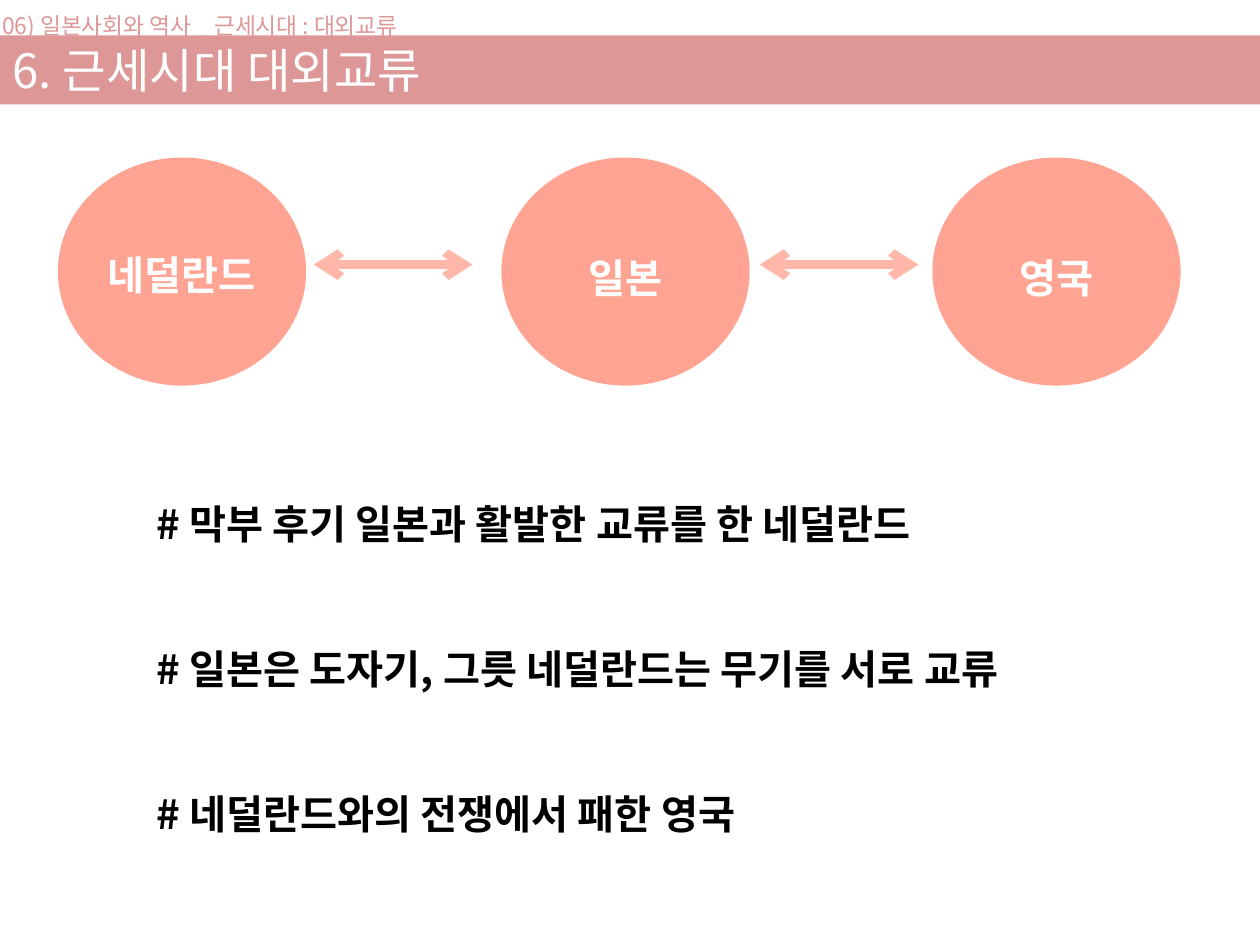
"""Build the slide on foreign exchange in early modern Japan."""
from typing import NamedTuple

from lxml import etree
from pptx import Presentation
from pptx.dml.color import RGBColor
from pptx.enum.shapes import MSO_CONNECTOR, MSO_SHAPE
from pptx.enum.text import MSO_ANCHOR, PP_ALIGN
from pptx.oxml.ns import qn
from pptx.util import Inches, Pt

OVAL, STRAIGHT = MSO_SHAPE.OVAL, MSO_CONNECTOR.STRAIGHT
LEFT, CENTER = PP_ALIGN.LEFT, PP_ALIGN.CENTER
TOP, MIDDLE = MSO_ANCHOR.TOP, MSO_ANCHOR.MIDDLE
WIDTH, HEIGHT = Inches(10), Inches(7.5)
FONT = "Noto Sans CJK KR"
ROSE, CORAL, PEACH, WHITE, BLACK = "DD9797", "FFA492", "FEB7A8", "FFFFFF", "000000"


class Box(NamedTuple):
    """A frame in percent of the slide's width and height."""
    x: float
    y: float
    w: float
    h: float


class Style(NamedTuple):
    """The look of a block of text."""
    size: float
    color: str
    bold: bool = False
    align: PP_ALIGN = LEFT
    anchor: MSO_ANCHOR = MIDDLE


class Country(NamedTuple):
    """A circle with its name and the top of the name's box."""
    name: str
    x: float
    label_y: float


HEADER = Style(13, ROSE)
TITLE = Style(27, WHITE)
LABEL = Style(23, WHITE, True, CENTER)
LIST = Style(23, BLACK, True, LEFT, TOP)
COUNTRIES = [Country("네덜란드", 4.6, 25.87), Country("일본", 39.8, 26.13),
             Country("영국", 74, 26.13)]
ARROW_STARTS = [24.9, 60.3]
POINTS = ["# 막부 후기 일본과 활발한 교류를 한 네덜란드",
          "# 일본은 도자기, 그릇 네덜란드는 무기를 서로 교류",
          "# 네덜란드와의 전쟁에서 패한 영국"]


def rgb(color: str) -> RGBColor:
    """Turn a hex string into a colour."""
    return RGBColor.from_string(color)


def px(share: float) -> int:
    """Turn a percentage of the width into a length."""
    return int(WIDTH * share / 100)


def py(share: float) -> int:
    """Turn a percentage of the height into a length."""
    return int(HEIGHT * share / 100)


def frame(box: Box) -> tuple:
    """Return left, top, width and height of a box."""
    return px(box.x), py(box.y), px(box.w), py(box.h)


def place(s, box: Box) -> None:
    """Move a placeholder to a box."""
    s.left, s.top, s.width, s.height = frame(box)


def write(s, lines: list, style: Style) -> None:
    """Fill a shape with styled paragraphs."""
    tf = s.text_frame
    tf.word_wrap, tf.vertical_anchor = True, style.anchor
    for i, line in enumerate(lines):
        p = tf.paragraphs[0] if i == 0 else tf.add_paragraph()
        p.alignment = style.align
        r = p.add_run()
        r.text = line
        for name, value in {"size": Pt(style.size), "bold": style.bold, "name": FONT}.items():
            setattr(r.font, name, value)
        r.font.color.rgb = rgb(style.color)
        etree.SubElement(r.font._element, qn("a:ea"), typeface=FONT)


def add_text(slide, box: Box, line: str, style: Style):
    """Add a text box with one line."""
    s = slide.shapes.add_textbox(*frame(box))
    write(s, [line], style)
    return s


def add_circle(slide, box: Box) -> None:
    """Add a plain coral ellipse."""
    s = slide.shapes.add_shape(OVAL, *frame(box))
    s.shadow.inherit = False
    s.fill.solid()
    s.fill.fore_color.rgb = rgb(CORAL)
    s.line.fill.background()


def add_arrow(slide, x: float, y: float, w: float) -> None:
    """Add a horizontal arrow with a head at both ends."""
    s = slide.shapes.add_connector(STRAIGHT, px(x), py(y), px(x + w), py(y))
    s.line.width = Pt(5)
    s.line.color.rgb = rgb(PEACH)
    for end in ("a:headEnd", "a:tailEnd"):
        etree.SubElement(s.line._get_or_add_ln(), qn(end), type="arrow")
    etree.SubElement(s._element.spPr, qn("a:effectLst"))


def fill_title(slide) -> None:
    """Turn the title placeholder into the coloured band."""
    s = slide.shapes.title
    place(s, Box(0, 3.73, 100, 7.33))
    s.fill.solid()
    s.fill.fore_color.rgb = rgb(ROSE)
    write(s, ["6. 근세시대 대외교류"], TITLE)


def fill_list(slide) -> None:
    """Write the points in the body placeholder without bullets."""
    s = slide.placeholders[1]
    place(s, Box(11.4, 52.13, 77.2, 50.4))
    write(s, POINTS, LIST)
    spacing = {"line_spacing": Pt(27.6), "space_before": Pt(0), "space_after": Pt(55.2)}
    for p in s.text_frame.paragraphs:
        for name, value in spacing.items():
            setattr(p, name, value)
        pPr = p._p.get_or_add_pPr()
        for name in ("marL", "indent"):
            pPr.set(name, "0")
        etree.SubElement(pPr, qn("a:buNone"))


def main() -> None:
    """Build and save the slide."""
    prs = Presentation()
    prs.slide_width, prs.slide_height = WIDTH, HEIGHT
    slide = prs.slides.add_slide(prs.slide_layouts[1])
    header = add_text(slide, Box(-0.8, 0.67, 58.7, 4.13),
                      "06) 일본사회와 역사 _ 근세시대 : 대외교류", HEADER)
    slide.shapes.title._element.addprevious(header._element)
    fill_title(slide)
    for c in COUNTRIES:
        add_circle(slide, Box(c.x, 16.67, 19.7, 24.13))
        add_text(slide, Box(c.x + 2, c.label_y, 15.7, 6.4), c.name, LABEL)
    for x in ARROW_STARTS:
        add_arrow(slide, x, 28, 12.6)
    fill_list(slide)
    prs.save("out.pptx")


if __name__ == "__main__":
    main()
